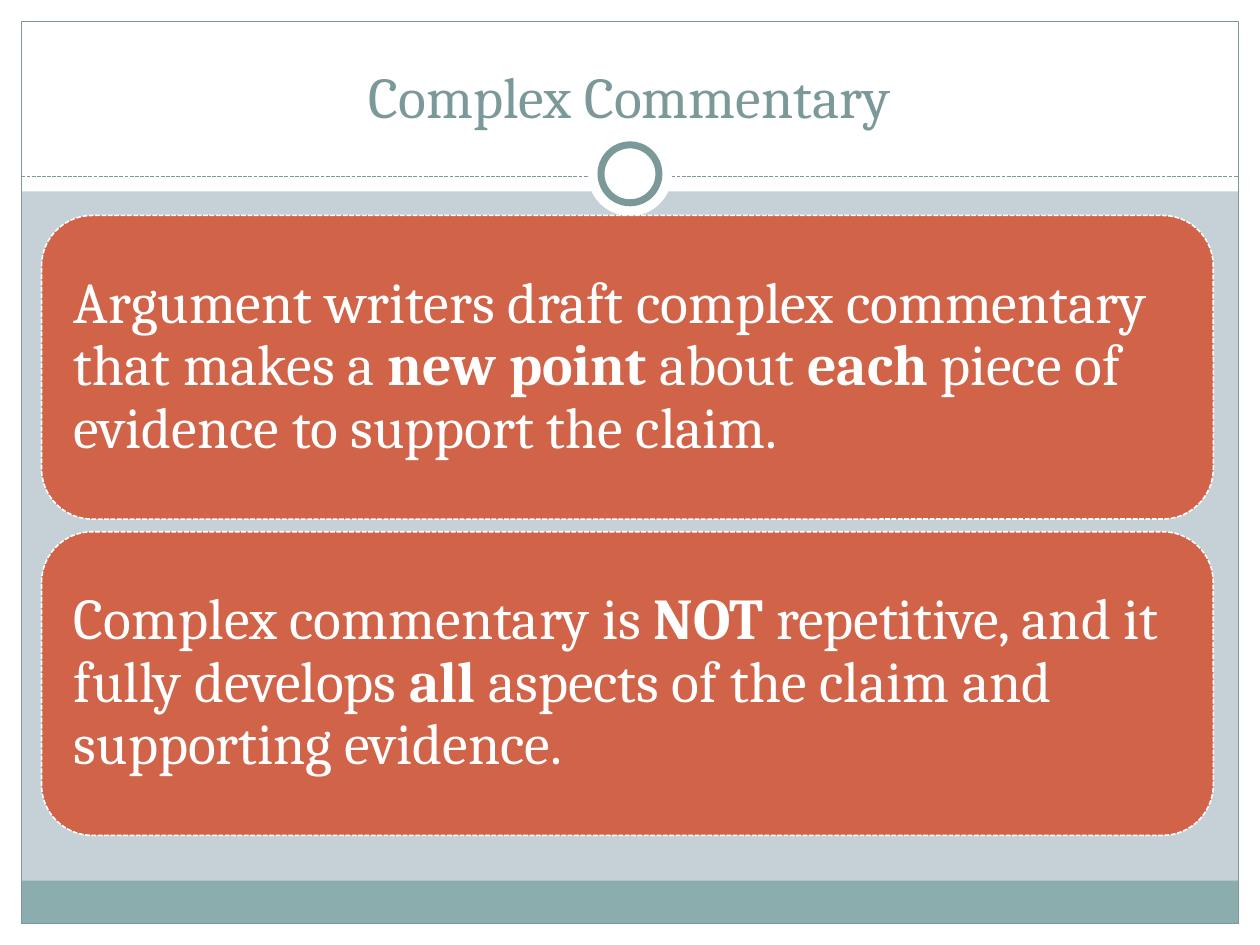
from dataclasses import dataclass

from lxml import etree
from pptx import Presentation
from pptx.dml.color import RGBColor
from pptx.enum.dml import MSO_LINE
from pptx.enum.shapes import MSO_CONNECTOR, MSO_SHAPE
from pptx.enum.text import MSO_ANCHOR, PP_ALIGN
from pptx.oxml.ns import qn
from pptx.util import Inches, Pt

RECTANGLE = MSO_SHAPE.RECTANGLE
ROUNDED = MSO_SHAPE.ROUNDED_RECTANGLE
OVAL = MSO_SHAPE.OVAL
STRAIGHT = MSO_CONNECTOR.STRAIGHT
DASHED = MSO_LINE.SQUARE_DOT  # written to the file as sysDash
MIDDLE = MSO_ANCHOR.MIDDLE
BOTTOM = MSO_ANCHOR.BOTTOM
LEFT = PP_ALIGN.LEFT
CENTER = PP_ALIGN.CENTER

COLORS = {
    "background": "C5D1D7",
    "white": "FFFFFF",
    "footer": "8CADAE",
    "accent": "7C999A",
    "card": "D16349",
}
FONT = "Cambria"
TEXT_SIZE = 33
WIDTH, HEIGHT = 10, 7.5
MARGIN = 0.17
INNER_WIDTH = WIDTH - 2 * MARGIN
HEADER_HEIGHT = 1.52
FOOTER_HEIGHT = 0.34
RULE_TOP = 1.4
RING_CENTER = 1.38
CARD_LEFT, CARD_TOP = 0.33, 1.71
CARD_WIDTH, CARD_HEIGHT, CARD_GAP = 9.3, 2.41, 0.1
CARD_INSET = 0.14


@dataclass(frozen=True)
class Box:
    left: float
    top: float
    width: float
    height: float

    def lengths(self) -> list:
        return [Inches(n) for n in (self.left, self.top, self.width, self.height)]


@dataclass(frozen=True)
class Phrase:
    text: str
    bold: bool = False


CARDS = [
    [
        Phrase("Argument writers draft complex commentary that makes a "),
        Phrase("new point ", bold=True),
        Phrase("about "),
        Phrase("each", bold=True),
        Phrase(" piece of evidence to support the claim."),
    ],
    [
        Phrase("Complex commentary is "),
        Phrase("NOT", bold=True),
        Phrase(" repetitive, and it fully develops "),
        Phrase("all", bold=True),
        Phrase(" aspects of the claim and supporting evidence."),
    ],
]


def color(name: str) -> RGBColor:
    return RGBColor.from_string(COLORS[name])


def add_panel(slide, kind, box: Box, fill=None, line=None, line_width=0.75):
    """Add a preset shape; without a fill or line name that part stays empty."""
    shape = slide.shapes.add_shape(kind, *box.lengths())
    shape.shadow.inherit = False
    if fill:
        shape.fill.solid()
        shape.fill.fore_color.rgb = color(fill)
    else:
        shape.fill.background()
    if line:
        shape.line.color.rgb = color(line)
        shape.line.width = Pt(line_width)
    else:
        shape.line.fill.background()
    return shape


def add_circle(slide, diameter: float, **style):
    box = Box((WIDTH - diameter) / 2, RING_CENTER - diameter / 2, diameter, diameter)
    return add_panel(slide, OVAL, box, fill="white", **style)


def add_rule(slide) -> None:
    rule = slide.shapes.add_connector(
        STRAIGHT, Inches(MARGIN), Inches(RULE_TOP), Inches(WIDTH - MARGIN), Inches(RULE_TOP)
    )
    rule.line.color.rgb = color("accent")
    rule.line.width = Pt(0.75)
    rule.line.dash_style = DASHED
    etree.SubElement(rule._element.spPr, qn("a:effectLst"))


def write_phrases(paragraph, phrases: list[Phrase], color_name: str) -> None:
    for phrase in phrases:
        run = paragraph.add_run()
        run.text = phrase.text
        run.font.name = FONT
        run.font.size = Pt(TEXT_SIZE)
        run.font.bold = phrase.bold
        run.font.color.rgb = color(color_name)


def add_frame(slide) -> None:
    """Draw the white border, header, footer band and ring behind the content."""
    white_areas = [
        Box(0, HEIGHT - MARGIN, WIDTH, MARGIN),
        Box(0, 0, WIDTH, HEADER_HEIGHT),
        Box(0, 0, MARGIN, HEIGHT),
        Box(WIDTH - MARGIN, 0, MARGIN, HEIGHT),
    ]
    for area in white_areas:
        add_panel(slide, RECTANGLE, area, fill="white")
    footer_top = HEIGHT - MARGIN - FOOTER_HEIGHT
    footer = Box(MARGIN, footer_top, INNER_WIDTH, FOOTER_HEIGHT)
    add_panel(slide, RECTANGLE, footer, fill="footer")
    border = Box(MARGIN, MARGIN, INNER_WIDTH, HEIGHT - 2 * MARGIN)
    add_panel(slide, RECTANGLE, border, line="accent")
    add_rule(slide)
    add_circle(slide, 0.67)
    add_circle(slide, 0.46, line="accent", line_width=4)


def add_title(slide, text: str) -> None:
    title = slide.shapes.add_textbox(*Box(0.33, 0.25, 9.33, 0.83).lengths())
    text_frame = title.text_frame
    text_frame.word_wrap = True
    text_frame.vertical_anchor = BOTTOM
    paragraph = text_frame.paragraphs[0]
    paragraph.alignment = CENTER
    write_phrases(paragraph, [Phrase(text)], "accent")


def add_card(slide, top: float, phrases: list[Phrase]) -> None:
    box = Box(CARD_LEFT, top, CARD_WIDTH, CARD_HEIGHT)
    card = add_panel(slide, ROUNDED, box, fill="card", line="white", line_width=0.9)
    card.line.dash_style = DASHED
    text_frame = card.text_frame
    text_frame.word_wrap = True
    text_frame.vertical_anchor = MIDDLE
    text_frame.margin_left = text_frame.margin_right = Inches(CARD_INSET)
    text_frame.margin_top = text_frame.margin_bottom = Inches(CARD_INSET)
    paragraph = text_frame.paragraphs[0]
    paragraph.alignment = LEFT
    paragraph.line_spacing = 0.9
    write_phrases(paragraph, phrases, "white")


def main() -> None:
    presentation = Presentation()
    presentation.slide_width = Inches(WIDTH)
    presentation.slide_height = Inches(HEIGHT)
    slide = presentation.slides.add_slide(presentation.slide_layouts[6])
    slide.background.fill.solid()
    slide.background.fill.fore_color.rgb = color("background")

    add_frame(slide)
    add_title(slide, "Complex Commentary")
    for index, phrases in enumerate(CARDS):
        add_card(slide, CARD_TOP + index * (CARD_HEIGHT + CARD_GAP), phrases)

    presentation.save("out.pptx")


if __name__ == "__main__":
    main()
